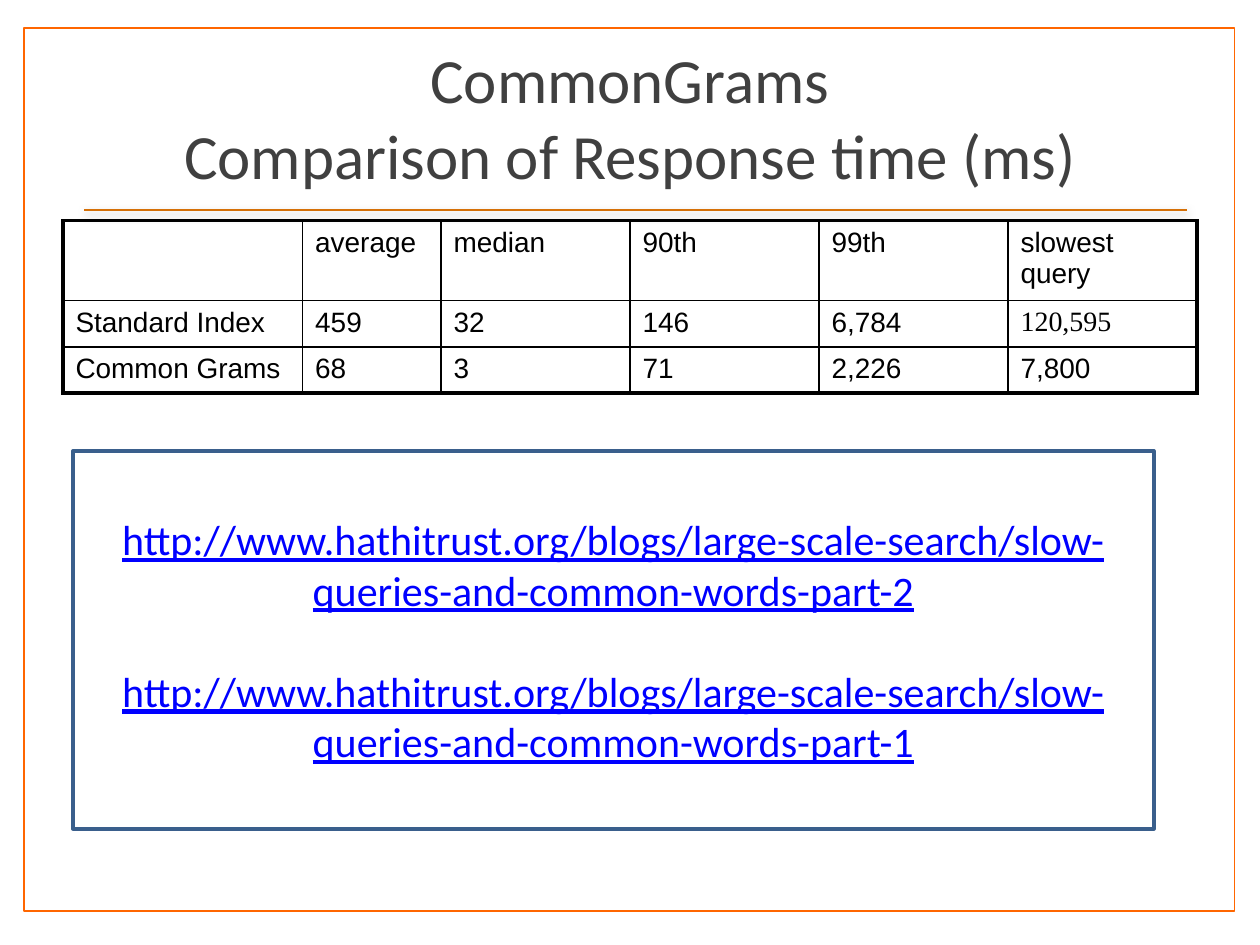
import pptx
import pptx.util
import pptx.dml.color
import pptx.enum.shapes
import pptx.enum.text
import pptx.oxml
import pptx.oxml.ns

Cm, Pt = pptx.util.Cm, pptx.util.Pt
RGBColor = pptx.dml.color.RGBColor
ALIGN = pptx.enum.text.PP_ALIGN
MIDDLE = pptx.enum.text.MSO_ANCHOR.MIDDLE
RECTANGLE = pptx.enum.shapes.MSO_SHAPE.RECTANGLE

BLACK = RGBColor(0x00, 0x00, 0x00)
WHITE = RGBColor(0xFF, 0xFF, 0xFF)
GREY = RGBColor(0x40, 0x40, 0x40)
ORANGE = RGBColor(0xFF, 0x66, 0x00)
RULE_ORANGE = RGBColor(0xD5, 0x70, 0x07)
BOX_BLUE = RGBColor(0x3A, 0x5F, 0x8C)
LINK_BLUE = RGBColor(0x00, 0x00, 0xFF)

# Content
TITLE = ["CommonGrams", "Comparison of Response time (ms)"]
RESPONSE_TIMES = [
    ["", "average", "median", "90th", "99th", "slowest query"],
    ["Standard Index", "459", "32", "146", "6,784", "120,595"],
    ["Common Grams", "68", "3", "71", "2,226", "7,800"],
]
SERIF_CELL = "120,595"
LINKS = [
    "http://www.hathitrust.org/blogs/large-scale-search/slow-queries-and-common-words-part-2",
    "http://www.hathitrust.org/blogs/large-scale-search/slow-queries-and-common-words-part-1",
]

# Table measures
COLUMN_WIDTHS = [4.83, 2.79, 3.81, 3.81, 3.81, 3.81]
ROW_HEIGHTS = [1.51, 0.88, 0.88]
INNER_BORDER, OUTER_BORDER = 1, 2.25

NAMESPACE = pptx.oxml.ns.nsdecls("a")


def style_font(paragraph, name, size, color):
    paragraph.font.name = name
    paragraph.font.size = Pt(size)
    paragraph.font.color.rgb = color


def add_rectangle(slide, left, top, width, height, line_color, line_width):
    shape = slide.shapes.add_shape(RECTANGLE, Cm(left), Cm(top), Cm(width), Cm(height))
    shape.shadow.inherit = False
    shape.fill.solid()
    shape.fill.fore_color.rgb = WHITE
    shape.line.color.rgb = line_color
    shape.line.width = Pt(line_width)
    return shape


def add_border(cell, side, width):
    cell._tc.get_or_add_tcPr().append(pptx.oxml.parse_xml(
        f'<a:ln{side} {NAMESPACE} w="{Pt(width)}"><a:solidFill>'
        f'<a:srgbClr val="{BLACK}"/></a:solidFill></a:ln{side}>'))


def add_title_rule(slide):
    rule = slide.shapes.add_connector(
        pptx.enum.shapes.MSO_CONNECTOR.STRAIGHT, Cm(1.7), Cm(4.24), Cm(23.93), Cm(4.24))
    rule.line.color.rgb = RULE_ORANGE
    rule.line.width = Pt(1)
    rule._element.spPr.append(pptx.oxml.parse_xml(
        f'<a:effectLst {NAMESPACE}><a:outerShdw blurRad="{Pt(5)}" dist="{Pt(1.8)}" '
        f'dir="5400000" rotWithShape="0"><a:srgbClr val="{BLACK}">'
        '<a:alpha val="35000"/></a:srgbClr></a:outerShdw></a:effectLst>'))


def add_title(slide):
    box = slide.shapes.add_textbox(Cm(1.27), Cm(0.76), Cm(22.86), Cm(3.18))
    frame = box.text_frame
    frame.word_wrap = True
    frame.vertical_anchor = MIDDLE
    paragraph = frame.paragraphs[0]
    paragraph.text = "\v".join(TITLE)
    paragraph.alignment = ALIGN.CENTER
    style_font(paragraph, "Calibri", 36, GREY)


def add_response_table(slide):
    last_row, last_column = len(ROW_HEIGHTS) - 1, len(COLUMN_WIDTHS) - 1
    table = slide.shapes.add_table(
        len(ROW_HEIGHTS), len(COLUMN_WIDTHS), Cm(1.27), Cm(4.45),
        Cm(sum(COLUMN_WIDTHS)), Cm(sum(ROW_HEIGHTS))).table
    table.first_row = table.horz_banding = False
    for column, width in zip(table.columns, COLUMN_WIDTHS):
        column.width = Cm(width)
    for row, height in zip(table.rows, ROW_HEIGHTS):
        row.height = Cm(height)

    for row_index, values in enumerate(RESPONSE_TIMES):
        for column_index, value in enumerate(values):
            cell = table.cell(row_index, column_index)
            outer_sides = {
                "L": column_index == 0,
                "R": column_index == last_column,
                "T": row_index == 0,
                "B": row_index == last_row,
            }
            for side, is_outer in outer_sides.items():
                add_border(cell, side, OUTER_BORDER if is_outer else INNER_BORDER)
            cell.fill.background()
            paragraph = cell.text_frame.paragraphs[0]
            paragraph.text = value
            font_name = "Times New Roman" if value == SERIF_CELL else "Arial"
            style_font(paragraph, font_name, 16, BLACK)


def add_link_box(slide):
    frame = add_rectangle(slide, 1.47, 9.09, 21.79, 7.62, BOX_BLUE, 2).text_frame
    frame.word_wrap = True
    frame.vertical_anchor = MIDDLE
    for index, link in enumerate(LINKS):
        paragraph = frame.add_paragraph() if index else frame.paragraphs[0]
        paragraph.text = link
        paragraph.alignment = ALIGN.CENTER
        if index:
            paragraph.space_before = Pt(29)
        style_font(paragraph, "Calibri", 24, LINK_BLUE)
        paragraph.font.underline = True


def main():
    presentation = pptx.Presentation()
    presentation.slide_width, presentation.slide_height = Cm(25.4), Cm(19.05)
    slide = presentation.slides.add_slide(presentation.slide_layouts[6])
    # Page frame and heading
    add_rectangle(slide, 0.48, 0.56, 24.41, 17.81, ORANGE, 1)
    add_title_rule(slide)
    add_title(slide)
    # Body
    add_response_table(slide)
    add_link_box(slide)
    presentation.save("out.pptx")


if __name__ == "__main__":
    main()
